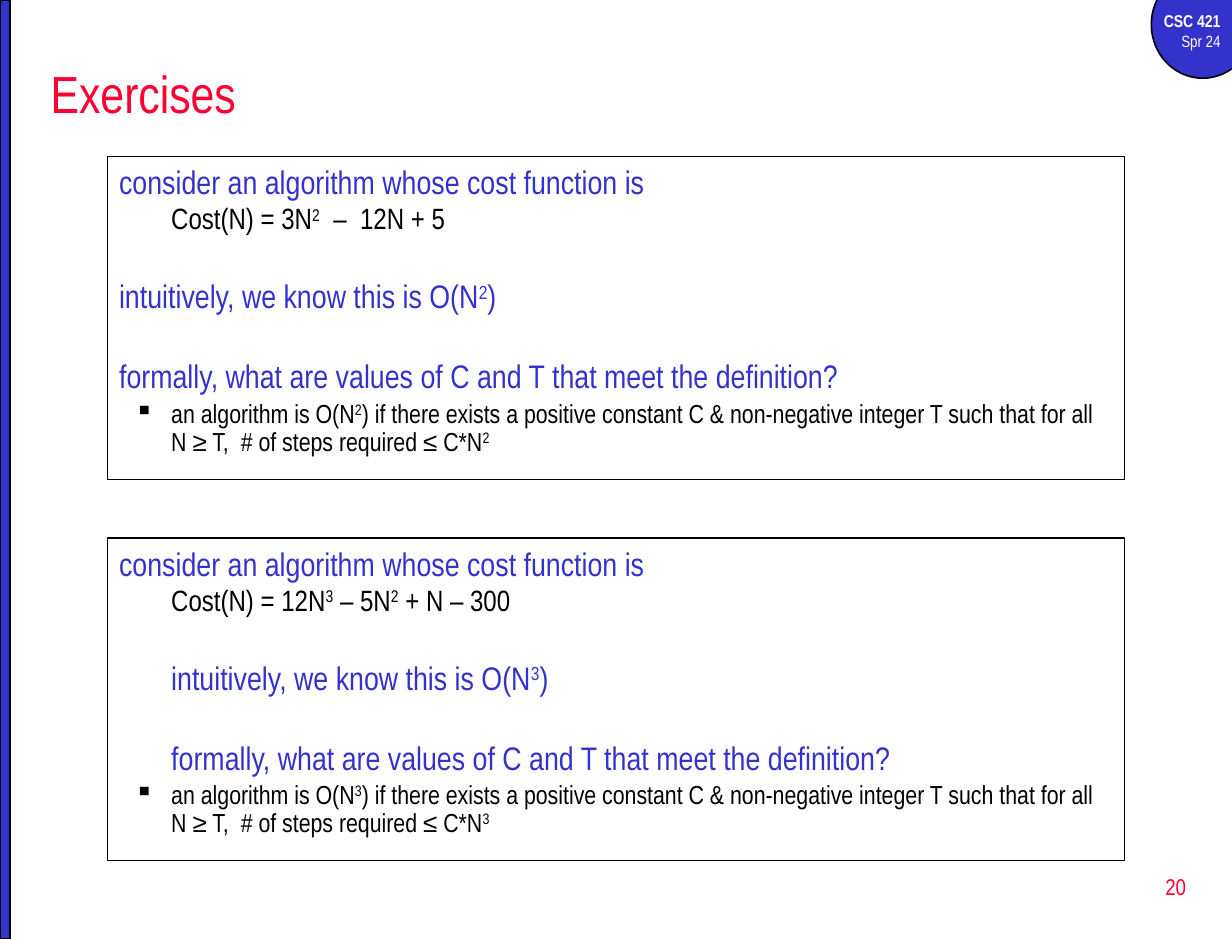
from dataclasses import dataclass
from lxml import etree
from pptx import Presentation
from pptx.dml.color import RGBColor as RGB
from pptx.enum.shapes import MSO_SHAPE as SHAPE
from pptx.enum.text import MSO_ANCHOR as ANCHOR, PP_ALIGN as ALIGN
from pptx.oxml.ns import qn
from pptx.util import Pt


@dataclass(frozen=True)
class Theme:
    font: str = "Arial Narrow"
    blue: RGB = RGB(0x33, 0x33, 0xCC)
    red: RGB = RGB(0xFF, 0x00, 0x33)
    black: RGB = RGB(0, 0, 0)
    white: RGB = RGB(0xFF, 0xFF, 0xFF)
    title: float = 32
    lead: float = 20
    formula: float = 18
    bullet: float = 16
    number: float = 14
    course: float = 10.5
    term: float = 10


T = Theme()
INDENT, HANG = 32, 22.5
BOX_LEFT, BOX_TOP, BOX_W, BOX_H, BOX_PITCH = 66, 96, 624, 198, 234

EXERCISES = [
    {"cost": "Cost(N) = 3N|2|  –  12N + 5", "power": 2, "lead_indent": 0},
    {"cost": "Cost(N) = 12N|3| – 5N|2| + N – 300", "power": 3, "lead_indent": INDENT},
]

STYLES = {
    "lead": dict(size=T.lead, color=T.blue, before=4, spacing=1.0),
    "spaced": dict(size=T.lead, color=T.blue, before=25, spacing=1.0),
    "formula": dict(size=T.formula, color=T.black, before=3.6, spacing=0.8),
    "bullet": dict(size=T.bullet, color=T.black, before=3.2, spacing=0.9),
}


def exercise_lines(cost, power, lead_indent):
    return [
        ("lead", 0, "consider an algorithm whose cost function is"),
        ("formula", INDENT, cost),
        ("spaced", lead_indent, f"intuitively, we know this is O(N|{power}|)"),
        ("spaced", lead_indent,
         "formally, what are values of C and T that meet the definition?"),
        ("bullet", INDENT,
         f"an algorithm is O(N|{power}|) if there exists a positive constant C & "
         "non-negative integer T such that for all N ≥ T,  # of steps required "
         f"≤ C*N|{power}|"),
    ]


def add_runs(p, text, size, color, bold=False):
    for i, piece in enumerate(text.split("|")):
        if not piece:
            continue
        r = p.add_run()
        r.text = piece
        r.font.name, r.font.size, r.font.bold = T.font, Pt(size), bold
        r.font.color.rgb = color
        if i % 2:
            r.font._element.set("baseline", "30000")


def add_shape(s, kind, left, top, width, height, fill=None, line=1):
    sp = s.shapes.add_shape(kind, Pt(left), Pt(top), Pt(width), Pt(height))
    sp.shadow.inherit = False
    if fill is None:
        sp.fill.background()
    else:
        sp.fill.solid()
        sp.fill.fore_color.rgb = fill
    sp.line.color.rgb = T.black
    sp.line.width = Pt(line)
    return sp


def add_label(s, left, top, width, height, lines, align, anchor):
    tf = s.shapes.add_textbox(Pt(left), Pt(top), Pt(width), Pt(height)).text_frame
    tf.word_wrap = True
    tf.vertical_anchor = anchor
    for i, (text, size, color, bold) in enumerate(lines):
        p = tf.add_paragraph() if i else tf.paragraphs[0]
        p.alignment = align
        add_runs(p, text, size, color, bold)


def add_exercise(s, top, exercise):
    sp = add_shape(s, SHAPE.RECTANGLE, BOX_LEFT, top, BOX_W, BOX_H, line=0.75)
    tf = sp.text_frame
    tf.word_wrap = True
    tf.vertical_anchor = ANCHOR.TOP
    for i, (name, indent, text) in enumerate(exercise_lines(**exercise)):
        style = STYLES[name]
        p = tf.add_paragraph() if i else tf.paragraphs[0]
        p.alignment = ALIGN.LEFT
        p.space_before = Pt(style["before"])
        p.line_spacing = style["spacing"]
        pPr = p._p.get_or_add_pPr()
        pPr.set("marL", str(Pt(indent)))
        if name == "bullet":
            pPr.set("indent", str(-Pt(HANG)))
            etree.SubElement(pPr, qn("a:buChar")).set("char", "▪")
        add_runs(p, text, style["size"], style["color"])


prs = Presentation()
prs.slide_width, prs.slide_height = Pt(756), Pt(576)
s = prs.slides.add_slide(prs.slide_layouts[6])

add_shape(s, SHAPE.OVAL, 706.5, -18, 63, 66, T.blue)
add_label(s, 696, 3, 60, 33,
          [("CSC 421", T.course, T.white, True), ("Spr 24", T.term, T.white, False)],
          ALIGN.RIGHT, ANCHOR.TOP)
add_shape(s, SHAPE.RECTANGLE, 0, 0, 6, 576, T.blue)
add_label(s, 577.5, 525, 157.5, 38, [("20", T.number, T.red, False)],
          ALIGN.RIGHT, ANCHOR.MIDDLE)
add_label(s, 24, 30, 714, 54, [("Exercises", T.title, T.red, False)],
          ALIGN.LEFT, ANCHOR.MIDDLE)
for i, exercise in enumerate(EXERCISES):
    add_exercise(s, BOX_TOP + i * BOX_PITCH, exercise)

prs.save("out.pptx")
